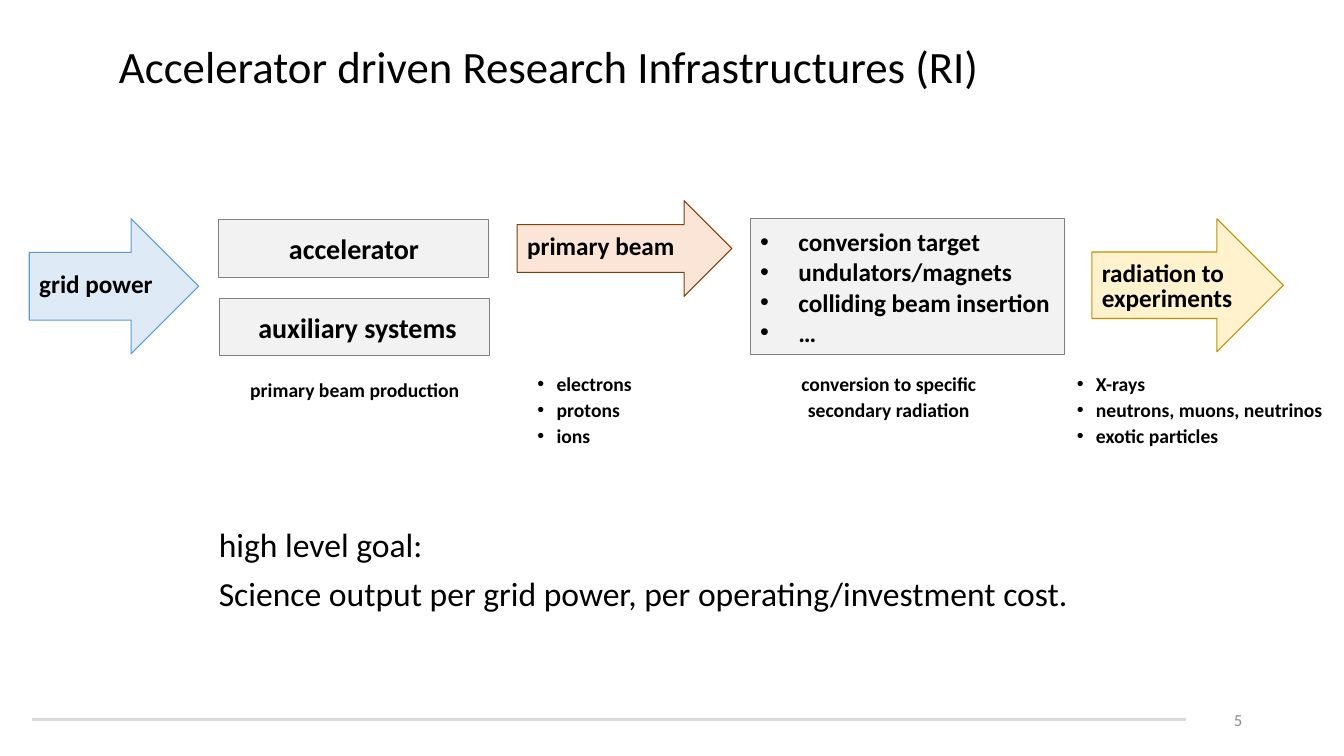
from pptx import Presentation
from pptx.dml.color import RGBColor
from pptx.enum.shapes import MSO_CONNECTOR, MSO_SHAPE
from pptx.enum.text import MSO_ANCHOR, PP_ALIGN
from pptx.oxml.ns import qn
from pptx.util import Pt
from lxml import etree

ARROW, RECT = MSO_SHAPE.RIGHT_ARROW, MSO_SHAPE.RECTANGLE
TOP, MIDDLE = MSO_ANCHOR.TOP, MSO_ANCHOR.MIDDLE
LEFT, CENTER, RIGHT = PP_ALIGN.LEFT, PP_ALIGN.CENTER, PP_ALIGN.RIGHT
PX = 9144  # EMU per px, 100 px to the inch
FONT = "Calibri"
COLORS = {
    "text": "000000", "number": "8C8C8C", "rule": "D9D9D9",
    "box": "F2F2F2", "box line": "808080",
    "grid": "DEEBF7", "grid line": "5B9BD5",
    "beam": "FBE5D6", "beam line": "843C0B",
    "radiation": "FFF2CC", "radiation line": "BF9000",
}

# Content: places are left, top, width, height in px
TITLE = "Accelerator driven Research Infrastructures (RI)"
TITLE_AT = (108, 26, 1150, 85)
PAGE, PAGE_AT = "5", (1169, 694, 73, 40)
RULE = (32, 714, 1176, 714)
ARROWS = [  # place, colour, line spacing in points, lines
    ((29, 217, 168, 134), "grid", 15, ["grid power"]),
    ((513, 199, 213, 95), "beam", 15, ["primary beam"]),
    ((1083, 217, 190, 132), "radiation", 18, ["radiation to", "experiments"]),
]
BOXES = [  # place, left inset, text
    ((217, 218, 268, 57), 10, "accelerator"),
    ((218, 296, 268, 57), 15, "auxiliary systems"),
]
CONVERSION_AT = (744, 217, 312, 135)
CONVERSION = ["conversion target", "undulators/magnets",
              "colliding beam insertion", "…"]
CAPTIONS = [
    ((218, 373, 268, 24), "primary beam production"),
    ((769, 367, 225, 24), "conversion to specific secondary radiation"),
]
PARTICLES = [
    ((533, 367, 149, 88), ["electrons", "protons", "ions"]),
    ((1068, 367, 249, 88),
     ["X-rays", "neutrons, muons, neutrinos", "exotic particles"]),
]
GOAL_AT = (197, 496, 908, 130)
GOAL = ["high level goal:",
        "Science output per grid power, per operating/investment cost."]


def rgb(name):
    return RGBColor.from_string(COLORS[name])


def emu(lengths):
    return [n * PX for n in lengths]


def add_bullet(p, indent):
    pPr = p._p.get_or_add_pPr()
    pPr.set("marL", str(indent * PX))
    pPr.set("indent", str(-indent * PX))
    etree.SubElement(pPr, qn("a:buFont")).set("typeface", "Arial")
    etree.SubElement(pPr, qn("a:buChar")).set("char", "•")


def write(sp, lines, size, bold=False, color="text", align=LEFT, anchor=TOP,
          inset=(10, 5, 10, 5), spacing=None, after=None, indent=0):
    tf = sp.text_frame
    tf.word_wrap = True
    tf.vertical_anchor = anchor
    tf.margin_left, tf.margin_top, tf.margin_right, tf.margin_bottom = emu(inset)
    tf.text = "\n".join(lines)
    for p in tf.paragraphs:
        if indent:
            add_bullet(p, indent)
        p.alignment = align
        p.line_spacing = spacing
        p.space_after = after
        for r in p.runs:
            r.font.name, r.font.size, r.font.bold = FONT, Pt(size), bold
            r.font.color.rgb = rgb(color)


def add_block(s, kind, at, color):
    sp = s.shapes.add_shape(kind, *emu(at))
    sp.shadow.inherit = False
    sp.fill.solid()
    sp.fill.fore_color.rgb = rgb(color)
    sp.line.color.rgb = rgb(color + " line")
    sp.line.width = Pt(0.75)
    return sp


def add_text(s, at, lines, size, **style):
    write(s.shapes.add_textbox(*emu(at)), lines, size, **style)


def main():
    prs = Presentation()
    prs.slide_width, prs.slide_height = emu((1333, 750))
    s = prs.slides.add_slide(prs.slide_layouts[5])

    # Title, footer rule and page number
    title = s.shapes.title
    title.left, title.top, title.width, title.height = emu(TITLE_AT)
    write(title, [TITLE], 32, anchor=MIDDLE, spacing=0.9)
    rule = s.shapes.add_connector(MSO_CONNECTOR.STRAIGHT, *emu(RULE))
    rule.line.color.rgb = rgb("rule")
    rule.line.width = Pt(2.25)
    etree.SubElement(rule._element.spPr, qn("a:effectLst"))
    add_text(s, PAGE_AT, [PAGE], 12, color="number", align=RIGHT, anchor=MIDDLE)

    # Flow from grid power to experiments
    for at, color, spacing, lines in ARROWS:
        write(add_block(s, ARROW, at, color), lines, 18, bold=True,
              anchor=MIDDLE, inset=(10, 12, 10, 8), spacing=Pt(spacing))
    for at, left, text in BOXES:
        write(add_block(s, RECT, at, "box"), [text], 20, bold=True,
              align=CENTER, anchor=MIDDLE, inset=(left, 5, 10, 5))
    write(add_block(s, RECT, CONVERSION_AT, "box"), CONVERSION, 18, bold=True,
          anchor=MIDDLE, indent=38)

    # Captions and particle lists below the flow
    small = {"bold": True, "inset": (0, 0, 0, 0), "spacing": 1.1}
    for at, text in CAPTIONS:
        add_text(s, at, [text], 14, align=CENTER, **small)
    for at, lines in PARTICLES:
        add_text(s, at, lines, 14, indent=19, **small)

    # Goal
    add_text(s, GOAL_AT, GOAL, 24, inset=(20, 20, 20, 20), spacing=1.1,
             after=Pt(3))
    prs.save("out.pptx")


if __name__ == "__main__":
    main()
